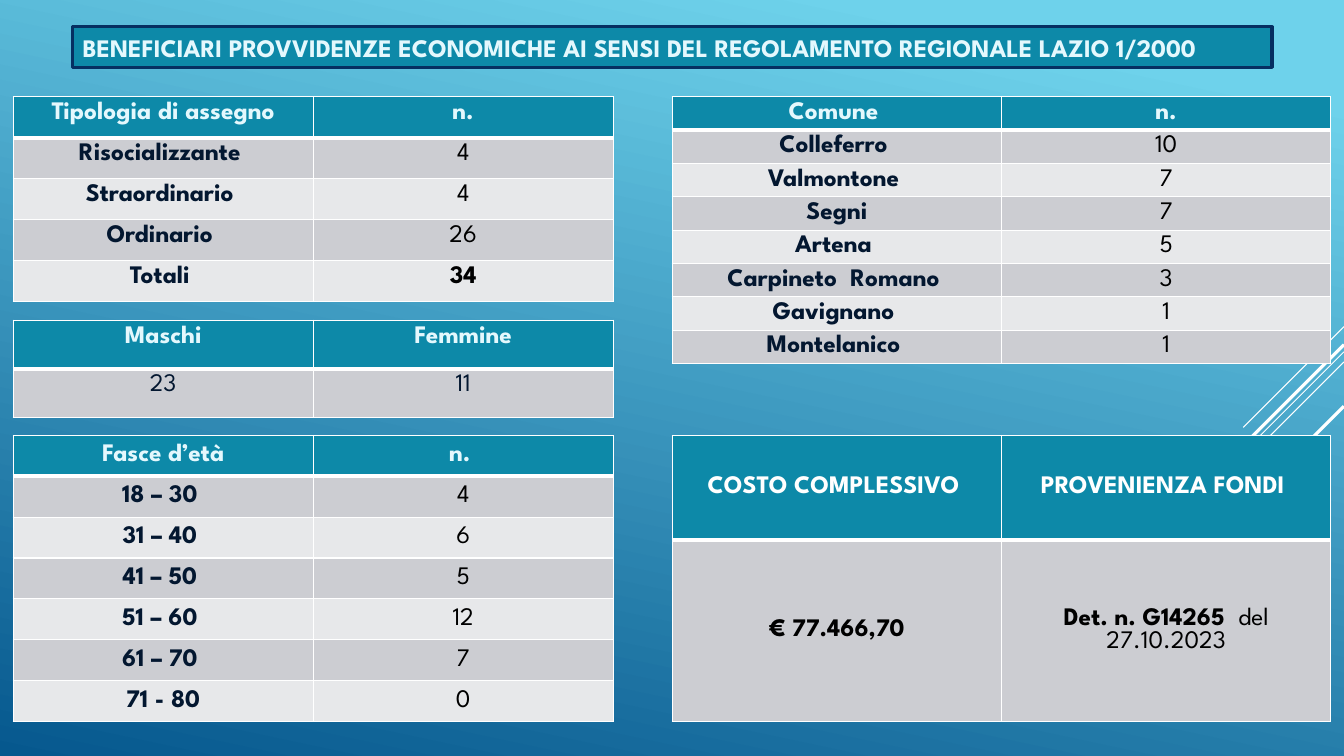
from lxml.etree import SubElement
from pptx import Presentation
from pptx.dml.color import RGBColor
from pptx.enum.shapes import MSO_CONNECTOR
from pptx.enum.text import MSO_ANCHOR, MSO_AUTO_SIZE, PP_ALIGN
from pptx.oxml import parse_xml
from pptx.oxml.ns import nsdecls, qn
from pptx.util import Pt

FONT = "League Spartan"
WIDTH, HEIGHT = 960, 540
TEAL, NAVY, PALE, INK = "0D89A8", "052F61", "E4F8FD", "031730"
WHITE, BLACK = "FFFFFF", "000000"
BANDS = ("CCCDD2", "E7E8EA")


def color(value):
    return RGBColor.from_string(value)


def add_run(paragraph, text, text_color, bold):
    run = paragraph.add_run()
    run.text = text
    run.font.name = FONT
    run.font.size = Pt(18)
    run.font.bold = bold
    run.font.color.rgb = color(text_color)


# Cell contents: each cell is a list of (text, colour, bold) runs
def header(*texts, text_color=PALE):
    return [[(text, text_color, True)] for text in texts]


def counts(pairs):
    return [[[(label, INK, True)], [(number, BLACK, False)]]
            for label, number in pairs]


def set_borders(cell, top, bottom):
    properties = cell._tc.get_or_add_tcPr()
    sides = (("L", 1), ("R", 1), ("T", top), ("B", bottom))
    for index, (side, weight) in enumerate(sides):
        border = parse_xml(
            f'<a:ln{side} {nsdecls("a")} w="{Pt(weight)}"><a:solidFill>'
            f'<a:srgbClr val="{WHITE}"/></a:solidFill></a:ln{side}>')
        properties.insert(index, border)


def add_data_table(slide, box, heights, rows, anchor=MSO_ANCHOR.TOP):
    left, top, width = box
    frame = slide.shapes.add_table(len(rows), 2, Pt(left), Pt(top),
                                   Pt(width), Pt(sum(heights)))
    table = frame.table
    for column in table.columns:
        column.width = Pt(width / 2)
    for row_index, (height, row) in enumerate(zip(heights, rows)):
        table.rows[row_index].height = Pt(height)
        for column_index, runs in enumerate(row):
            cell = table.cell(row_index, column_index)
            cell.vertical_anchor = anchor
            cell.fill.solid()
            fill = BANDS[(row_index - 1) % 2] if row_index else TEAL
            cell.fill.fore_color.rgb = color(fill)
            set_borders(cell, top=3 if row_index == 1 else 1,
                        bottom=1 if row_index else 3)
            paragraph = cell.text_frame.paragraphs[0]
            paragraph.alignment = PP_ALIGN.CENTER
            for run in runs:
                add_run(paragraph, *run)


def add_background(slide):
    fill = slide.background.fill
    fill.gradient()
    fill.gradient_angle = 258
    stops = ((0.1, "6ED2EB"), (1, "06588E"))
    for stop, (position, value) in zip(fill.gradient_stops, stops):
        stop.position = position
        stop.color.rgb = color(value)


# Diagonal rays running down and left from the right edge
def add_rays(slide, right, rays):
    for top, reach, weight in rays:
        ray = slide.shapes.add_connector(
            MSO_CONNECTOR.STRAIGHT, Pt(right), Pt(top),
            Pt(right - reach), Pt(top + reach))
        ray.line.color.rgb = color(WHITE)
        ray.line.width = Pt(weight)
        SubElement(ray._element.spPr, qn("a:effectLst"))


def add_title(slide, box, text):
    title = slide.shapes.title
    title.left, title.top, title.width, title.height = map(Pt, box)
    title.fill.solid()
    title.fill.fore_color.rgb = color(TEAL)
    title.line.color.rgb = color(NAVY)
    title.line.width = Pt(2.25)
    frame = title.text_frame
    frame.word_wrap = True
    frame.auto_size = MSO_AUTO_SIZE.NONE
    frame.vertical_anchor = MSO_ANCHOR.MIDDLE
    paragraph = frame.paragraphs[0]
    paragraph.alignment = PP_ALIGN.LEFT
    add_run(paragraph, text, PALE, True)


# Left column: allowance type, gender, age bands
def add_left_column(slide, left, top, width):
    types = counts([("Risocializzante ", "4"), ("Straordinario ", "4"),
                    ("Ordinario ", "26")])
    total = [[("Totali ", INK, True)], [("34", BLACK, True)]]
    add_data_table(slide, (left, top, width), [29.2] * 5,
                   [header("Tipologia di assegno", "n."), *types, total])

    genders = [[("23", INK, False)], [("11", INK, False)]]
    add_data_table(slide, (left, top + 159.6, width), [34.6] * 2,
                   [header("Maschi", "Femmine"), genders])

    ages = counts([("18 – 30 ", "4"), ("31 – 40 ", "6"), ("41 – 50 ", "5"),
                   ("51 – 60 ", "12"), ("61 – 70 ", "7"), ("71 - 80", "0")])
    add_data_table(slide, (left, top + 241.8, width), [29.2] * 7,
                   [header("Fasce d’età", "n. "), *ages], MSO_ANCHOR.MIDDLE)


# Right column: municipalities, cost and funding
def add_right_column(slide, left, top, width):
    towns = counts([("Colleferro ", "10"), ("Valmontone ", "7"),
                    ("Segni", "7"), ("Artena ", "5"),
                    ("Carpineto  Romano ", "3"), ("Gavignano ", "1"),
                    ("Montelanico ", "1")])
    add_data_table(slide, (left, top, width), [23.8] * 8,
                   [header("Comune ", "n."), *towns])

    funding = [[("€ 77.466,70", BLACK, True)],
               [("Det. n. G14265  ", BLACK, True),
                ("del 27.10.2023", BLACK, False)]]
    titles = header("COSTO COMPLESSIVO ", "PROVENIENZA FONDI ",
                    text_color=WHITE)
    add_data_table(slide, (left, top + 241.8, width), [75, 129.4],
                   [titles, funding], MSO_ANCHOR.MIDDLE)


def main():
    presentation = Presentation()
    presentation.slide_width, presentation.slide_height = Pt(WIDTH), Pt(HEIGHT)
    slide = presentation.slides.add_slide(presentation.slide_layouts[5])
    add_background(slide)
    add_rays(slide, WIDTH, [(233.3, 72, 0.75), (251.3, 234.7, 0.75),
                            (258.5, 149, 0.75), (246.2, 137.5, 2.25),
                            (290.2, 100, 2.25)])
    add_title(slide, (51.8, 19.2, 856.8, 29),
              "BENEFICIARI PROVVIDENZE ECONOMICHE AI SENSI DEL "
              "REGOLAMENTO REGIONALE LAZIO 1/2000")
    add_left_column(slide, 9.4, 69.2, 428.6)
    add_right_column(slide, 480.2, 69.2, 470.4)
    presentation.save("out.pptx")


if __name__ == "__main__":
    main()
